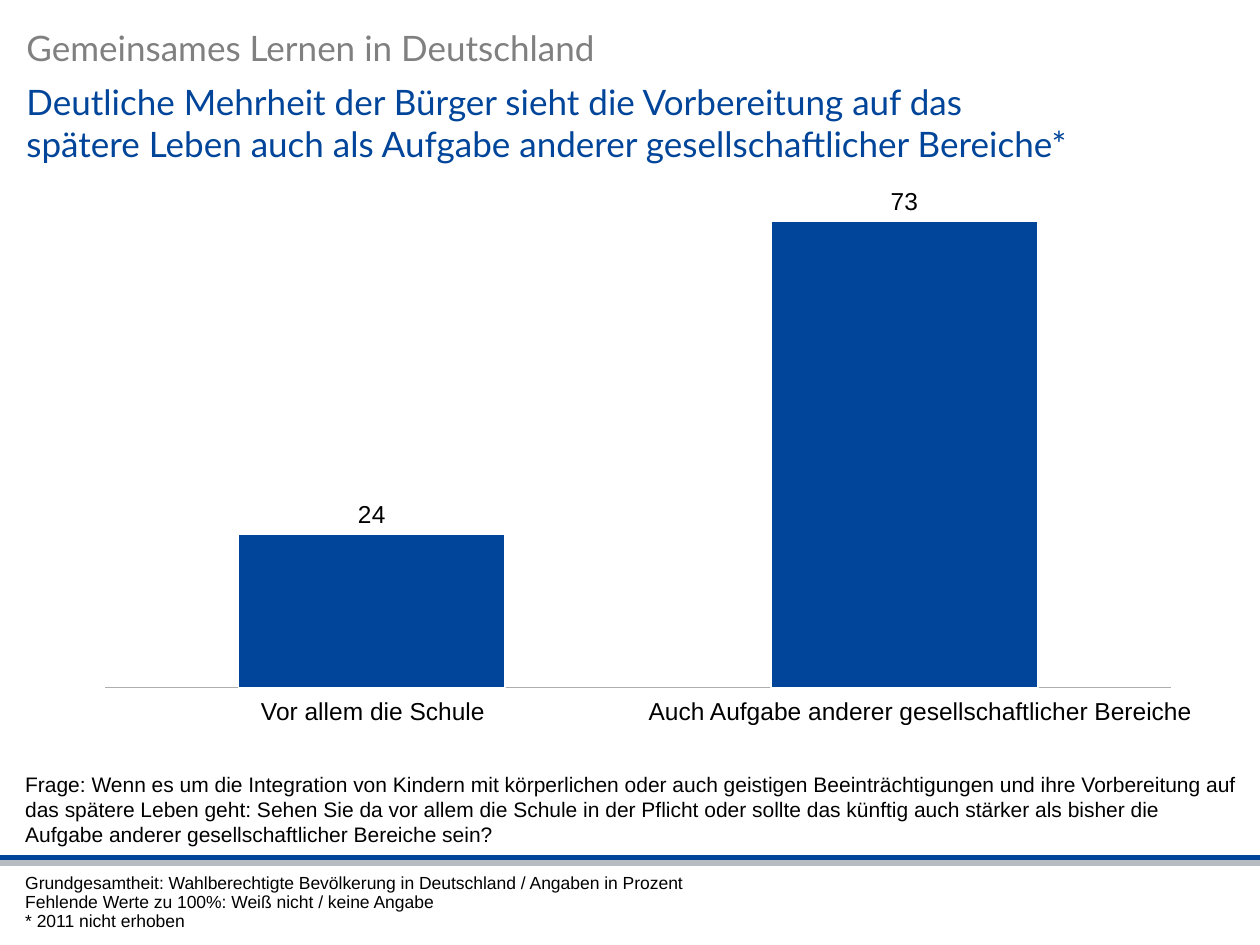
from dataclasses import dataclass

from lxml.etree import SubElement
from pptx import Presentation
from pptx.chart.data import CategoryChartData
from pptx.dml.color import RGBColor
from pptx.enum.chart import XL_CHART_TYPE, XL_LABEL_POSITION, XL_TICK_LABEL_POSITION, XL_TICK_MARK
from pptx.enum.shapes import MSO_CONNECTOR
from pptx.enum.text import MSO_ANCHOR, MSO_AUTO_SIZE, PP_ALIGN
from pptx.oxml import parse_xml
from pptx.oxml.ns import nsdecls, qn
from pptx.util import Inches, Pt


@dataclass(frozen=True)
class Theme:
    blue: RGBColor = RGBColor.from_string("004599")
    silver: RGBColor = RGBColor.from_string("B7BCC1")
    gray: RGBColor = RGBColor.from_string("808080")
    axis: RGBColor = RGBColor.from_string("ADADAD")
    black: RGBColor = RGBColor.from_string("000000")
    white: RGBColor = RGBColor.from_string("FFFFFF")
    heading_font: str = "Lato"
    body_font: str = "Arial"
    heading: Pt = Pt(20)
    label: Pt = Pt(14)
    question: Pt = Pt(12)
    note: Pt = Pt(10)


theme = Theme()


def style_font(font, size, color=theme.black, name=theme.body_font):
    font.size = size
    font.name = name
    font.bold = False
    font.color.rgb = color


def write_text(frame, lines, size, color=theme.black, font=theme.body_font,
               align=PP_ALIGN.LEFT, anchor=MSO_ANCHOR.TOP, spacing=None):
    """Fill a text frame with one paragraph per line, without margins."""
    frame.word_wrap = True
    frame.vertical_anchor = anchor
    frame.margin_left = frame.margin_right = frame.margin_top = frame.margin_bottom = 0
    for index, line in enumerate(lines):
        para = frame.paragraphs[0] if index == 0 else frame.add_paragraph()
        para.alignment = align
        para.line_spacing = spacing
        span = para.add_run()
        span.text = line
        style_font(span.font, size, color, font)


deck = Presentation()
deck.slide_width, deck.slide_height = Inches(10), Inches(7.5)
page = deck.slides.add_slide(deck.slide_layouts[5])
margin = Inches(0.2)

# Double rule above the footnotes
for top, color in ((6.81, theme.blue), (6.85, theme.silver)):
    rule = page.shapes.add_connector(
        MSO_CONNECTOR.STRAIGHT, 0, Inches(top), deck.slide_width, Inches(top))
    rule.line.color.rgb = color
    rule.line.width = Pt(3)
    SubElement(rule._element.spPr, qn("a:effectLst"))

# Headings
heading_width = Inches(8.36)
topic = page.shapes.add_textbox(Inches(0.21), Inches(0.21), heading_width, Inches(0.43))
write_text(topic.text_frame, ["Gemeinsames Lernen in Deutschland"],
           theme.heading, color=theme.gray, font=theme.heading_font)
title = page.shapes.title
title.left, title.top = Inches(0.21), Inches(0.64)
title.width, title.height = heading_width, Inches(0.8)
title.text_frame.auto_size = MSO_AUTO_SIZE.NONE
write_text(title.text_frame,
           ["Deutliche Mehrheit der Bürger sieht die Vorbereitung auf das spätere Leben "
            "auch als Aufgabe anderer gesellschaftlicher Bereiche*"],
           theme.heading, color=theme.blue, font=theme.heading_font)

# Column chart
data = CategoryChartData()
data.categories = ["1", "2"]
data.add_series("Series 1", (24, 73))
chart = page.shapes.add_chart(
    XL_CHART_TYPE.COLUMN_CLUSTERED, Inches(0.83), Inches(1.4),
    Inches(8.47), Inches(4.14), data).chart
chart.has_legend = chart.has_title = False
style_font(chart.font, theme.label)

category_axis, value_axis = chart.category_axis, chart.value_axis
category_axis.tick_label_position = XL_TICK_LABEL_POSITION.NONE
category_axis.major_tick_mark = category_axis.minor_tick_mark = XL_TICK_MARK.NONE
category_axis.format.line.color.rgb = theme.axis
category_axis.format.line.width = Pt(1)
value_axis.minimum_scale, value_axis.maximum_scale, value_axis.major_unit = 0, 80, 20
value_axis.has_major_gridlines = False
value_axis.visible = False

plot = chart.plots[0]
plot.gap_width, plot.overlap, plot.vary_by_categories = 100, -17, False
bars = plot.series[0].format
bars.fill.solid()
bars.fill.fore_color.rgb = theme.blue
bars.line.color.rgb = theme.white
bars.line.width = Pt(1)
plot.has_data_labels = True
labels = plot.data_labels
labels.show_value = True
labels.position = XL_LABEL_POSITION.OUTSIDE_END
style_font(labels.font, theme.label)

plot_area = chart._chartSpace.chart.plotArea
for layout in plot_area.findall(qn("c:layout")):
    plot_area.remove(layout)
plot_area.insert(0, parse_xml(
    f'<c:layout {nsdecls("c")}><c:manualLayout><c:layoutTarget val="inner"/>'
    '<c:xMode val="edge"/><c:yMode val="edge"/><c:x val="0"/><c:y val="0"/>'
    '<c:w val="1"/><c:h val="0.98"/></c:manualLayout></c:layout>'))

# Category names under the columns
names = ("Vor allem die Schule", "Auch Aufgabe anderer gesellschaftlicher Bereiche")
table = page.shapes.add_table(
    1, 2, Inches(0.35), Inches(5.5), Inches(9.29), Inches(0.26)).table
table.first_row = table.horz_banding = False
for index, (name, width, indent) in enumerate(zip(names, (4.62, 4.67), (0.6, 0))):
    table.columns[index].width = Inches(width)
    cell = table.cell(0, index)
    cell.fill.background()
    write_text(cell.text_frame, [name], theme.label, align=PP_ALIGN.CENTER)
    cell.vertical_anchor = MSO_ANCHOR.BOTTOM
    cell.margin_left = Inches(indent)
    cell.margin_right = cell.margin_bottom = 0
    cell.margin_top = Inches(0.01)

# Survey question and footnotes
question = page.shapes.add_textbox(margin, Inches(6.11), Inches(9.63), Inches(0.61))
write_text(question.text_frame,
           ["Frage: Wenn es um die Integration von Kindern mit körperlichen oder auch geistigen "
            "Beeinträchtigungen und ihre Vorbereitung auf das spätere Leben geht: Sehen Sie da "
            "vor allem die Schule in der Pflicht oder sollte das künftig auch stärker als bisher "
            "die Aufgabe anderer gesellschaftlicher Bereiche sein?"],
           theme.question, anchor=MSO_ANCHOR.BOTTOM)
notes = page.shapes.add_textbox(margin, Inches(6.94), Inches(7.61), Inches(0.49))
write_text(notes.text_frame,
           ["Grundgesamtheit: Wahlberechtigte Bevölkerung in Deutschland / Angaben in Prozent",
            "Fehlende Werte zu 100%: Weiß nicht / keine Angabe",
            "* 2011 nicht erhoben"],
           theme.note, spacing=0.9)

deck.save("out.pptx")
